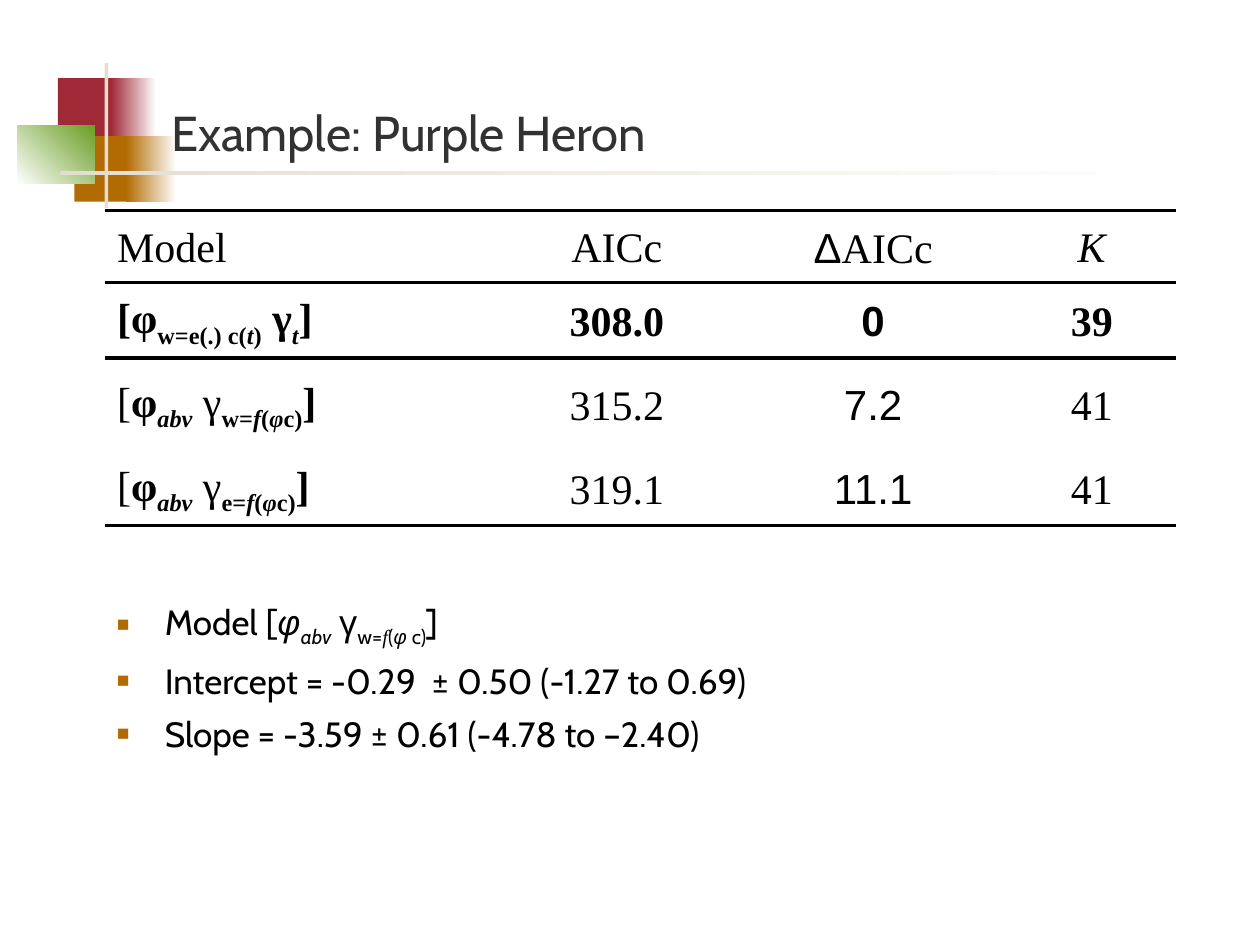
from dataclasses import dataclass

import lxml.etree
import pptx
import pptx.dml.color
import pptx.enum.shapes
import pptx.enum.text
import pptx.oxml.ns
import pptx.util

Inches = pptx.util.Inches
Pt = pptx.util.Pt
qn = pptx.oxml.ns.qn
Align = pptx.enum.text.PP_ALIGN
Anchor = pptx.enum.text.MSO_ANCHOR


@dataclass(frozen=True)
class Theme:
    """Colours, fonts and type sizes of the slide."""
    white: str = "FFFFFF"
    black: str = "000000"
    title: str = "323232"
    red: str = "9F2936"
    amber: str = "B26B02"
    green: str = "6B9F25"
    sand: str = "E3DED1"
    sans: str = "Cabin"
    serif: str = "Times New Roman"
    figures: str = "Arial"
    title_size: float = 28
    table_size: float = 24
    body_size: float = 20
    rule: float = 2.25
    leading: float = 1.1


THEME = Theme()

BLOCKS = [
    (0.46, 0.62, 0.48, 0.52, (THEME.red,), 0),
    (0.88, 0.62, 0.36, 0.52, (THEME.red, THEME.white), 0),
    (0.59, 1.08, 0.46, 0.52, (THEME.amber,), 0),
    (1, 1.08, 0.4, 0.52, (THEME.amber, THEME.white), 0),
    (0.14, 1, 0.61, 0.46, (THEME.white, THEME.green), 45),
    (0.83, 0.5, 0.03, 1.15, (THEME.sand,), 0),
    (0.48, 1.36, 9, 0.03, (THEME.sand, THEME.white), 0),
]

COLUMNS = [3.1, 1.93, 2.14, 1.33]
ROWS = [0.57, 0.57, 0.73, 0.57]


def covariate_model(group):
    """Return the runs of a model whose gamma depends on phi in one group."""
    return [("[", ""), ("φ", "b"), ("abv", "bis"), (" γ", ""), (group + "=", "bs"),
            ("f", "bis"), ("(", "bs"), ("φ", "bis"), ("c)", "bs"), ("]", "b")]


CELLS = [
    [[("Model", "")], [("AICc", "")], [("Δ", "a"), ("AICc", "")], [("K", "i")]],
    [[("[φ", "b"), ("w=e(.) c(", "bs"), ("t", "bis"), (")", "bs"), (" γ", "b"),
      ("t", "bis"), ("]", "b")],
     [("308.0", "b")], [("0", "ab")], [("39", "b")]],
    [covariate_model("w"), [("315.2", "")], [("7.2", "a")], [("41", "")]],
    [covariate_model("e"), [("319.1", "")], [("11.1", "a")], [("41", "")]],
]

RESULTS = [
    [("Model [", ""), ("φ", "i"), ("abv", "is"), (" γ", ""), ("w=", "s"), ("f", "ist"),
     ("(", "s"), ("φ ", "is"), ("c)", "s"), ("]", "")],
    [("Intercept = -0.29  ± 0.50 (-1.27 to 0.69)", "")],
    [("Slope = -3.59 ± 0.61 (-4.78 to –2.40)", "")],
]


def rgb(value):
    """Return a colour object for a hex value."""
    return pptx.dml.color.RGBColor.from_string(value)


def add_runs(para, runs, font, size, color):
    """Add runs flagged b bold, i italic, s subscript, a Arial, t Times."""
    for text, flags in runs:
        span = para.add_run()
        span.text = text
        face = THEME.figures if "a" in flags else THEME.serif if "t" in flags else font
        span.font.name = face
        span.font.size = Pt(size)
        span.font.color.rgb = rgb(color)
        span.font.bold = "b" in flags
        span.font.italic = "i" in flags
        if "s" in flags:
            span.font._element.set("baseline", "-25000")


def add_block(page, left, top, width, height, colors, angle):
    """Add a rectangle with a solid or two-colour gradient fill."""
    block = page.shapes.add_shape(
        pptx.enum.shapes.MSO_SHAPE.RECTANGLE,
        Inches(left), Inches(top), Inches(width), Inches(height))
    block.shadow.inherit = False
    block.line.fill.background()
    if len(colors) == 1:
        block.fill.solid()
        block.fill.fore_color.rgb = rgb(colors[0])
    else:
        block.fill.gradient()
        block.fill.gradient_angle = angle
        for stop, color in zip(block.fill.gradient_stops, colors):
            stop.color.rgb = rgb(color)


def add_text_frame(page, left, top, width, height, anchor):
    """Add a wrapping text box and return its text frame."""
    box = page.shapes.add_textbox(Inches(left), Inches(top), Inches(width), Inches(height))
    frame = box.text_frame
    frame.word_wrap = True
    frame.vertical_anchor = anchor
    return frame


def add_title(page, text):
    """Add the slide title."""
    frame = add_text_frame(page, 1.26, 0.23, 8.52, 1.1, Anchor.BOTTOM)
    add_runs(frame.paragraphs[0], [(text, "")], THEME.sans, THEME.title_size, THEME.title)


def add_rule(cell, tag):
    """Draw a horizontal rule on one side of a cell."""
    line = lxml.etree.SubElement(cell._tc.get_or_add_tcPr(), qn(tag), w=str(Pt(THEME.rule)))
    fill = lxml.etree.SubElement(line, qn("a:solidFill"))
    lxml.etree.SubElement(fill, qn("a:srgbClr"), val=THEME.black)


def add_model_table(page):
    """Add the model comparison table with three horizontal rules."""
    frame = page.shapes.add_table(len(ROWS), len(COLUMNS), Inches(0.83), Inches(1.67),
                                  Inches(sum(COLUMNS)), Inches(sum(ROWS)))
    table = frame.table
    table.first_row = table.horz_banding = False
    style = table._tbl.tblPr.find(qn("a:tableStyleId"))
    style.text = "{2D5ABB26-0587-4C30-8999-92F81FD0307C}"
    for column, width in zip(table.columns, COLUMNS):
        column.width = Inches(width)
    for row, height in zip(table.rows, ROWS):
        row.height = Inches(height)
    for i, cells in enumerate(CELLS):
        for j, runs in enumerate(cells):
            cell = table.cell(i, j)
            cell.vertical_anchor = Anchor.MIDDLE
            if i < 2:
                add_rule(cell, "a:lnT")
            if i in (0, len(ROWS) - 1):
                add_rule(cell, "a:lnB")
            cell.fill.background()
            para = cell.text_frame.paragraphs[0]
            para.alignment = Align.CENTER if j else Align.LEFT
            para.line_spacing = THEME.leading
            add_runs(para, runs, THEME.serif, THEME.table_size, THEME.black)


def add_bullet(para):
    """Give a paragraph a hanging square bullet."""
    props = para._p.get_or_add_pPr()
    props.set("marL", str(Inches(0.38)))
    props.set("indent", str(-Inches(0.38)))
    color = lxml.etree.SubElement(props, qn("a:buClr"))
    lxml.etree.SubElement(color, qn("a:srgbClr"), val=THEME.amber)
    lxml.etree.SubElement(props, qn("a:buSzPct"), val="60000")
    lxml.etree.SubElement(props, qn("a:buFont"), typeface=THEME.figures)
    lxml.etree.SubElement(props, qn("a:buChar"), char="■")


def add_results(page):
    """Add the bulleted estimates below the table."""
    frame = add_text_frame(page, 0.83, 4.68, 8.96, 2.03, Anchor.TOP)
    for i, runs in enumerate(RESULTS):
        para = frame.add_paragraph() if i else frame.paragraphs[0]
        para.line_spacing = THEME.leading
        para.space_before = Pt(THEME.body_size * 0.2)
        add_bullet(para)
        add_runs(para, runs, THEME.sans, THEME.body_size, THEME.black)


def main():
    """Build and save the slide."""
    deck = pptx.Presentation()
    deck.slide_width, deck.slide_height = Inches(10), Inches(7.5)
    page = deck.slides.add_slide(deck.slide_layouts[6])
    for block in BLOCKS:
        add_block(page, *block)
    add_title(page, "Example: Purple Heron")
    add_model_table(page)
    add_results(page)
    deck.save("out.pptx")


if __name__ == "__main__":
    main()
